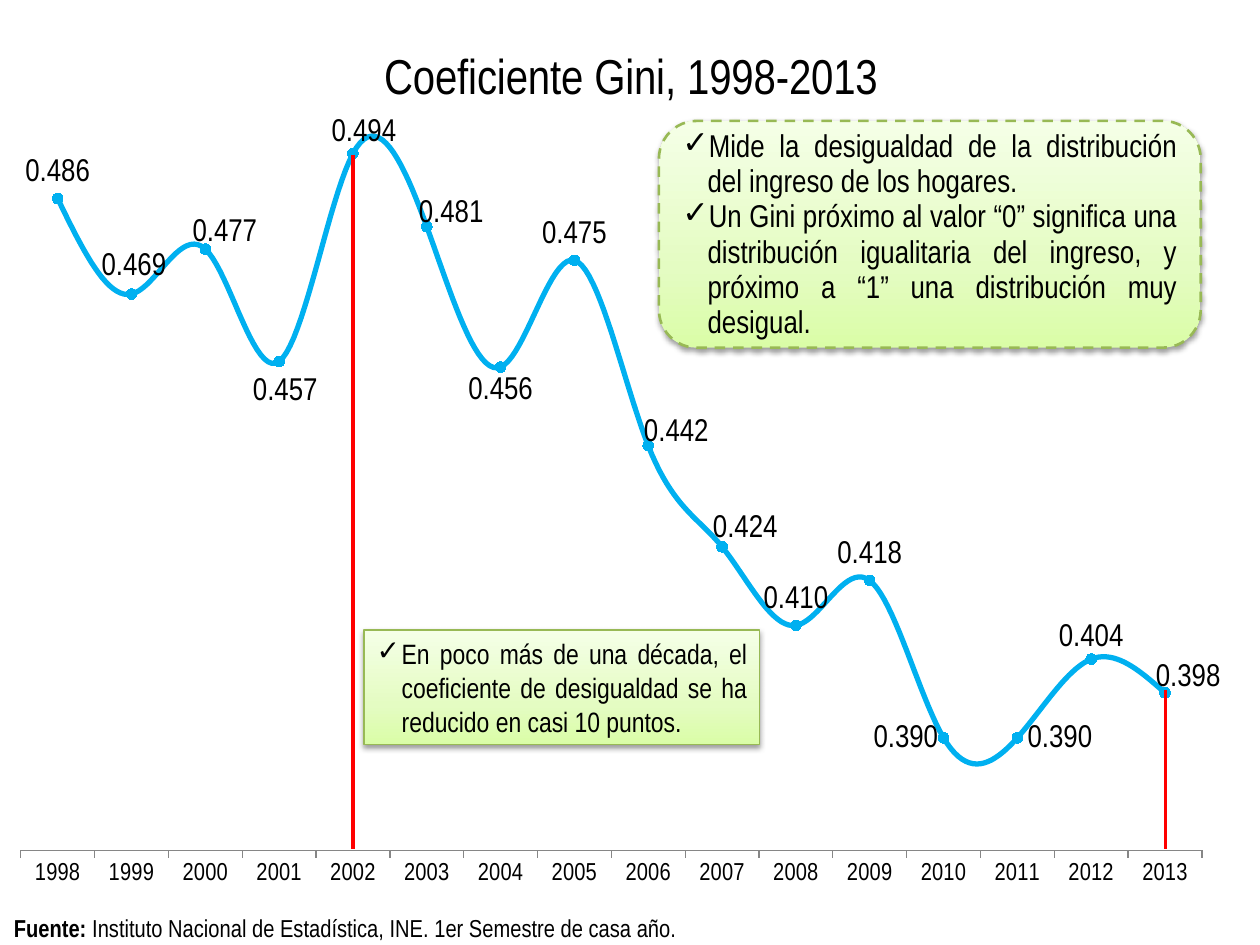
from lxml import etree
from pptx import Presentation
from pptx.chart.data import CategoryChartData
from pptx.dml.color import RGBColor
from pptx.enum.chart import XL_CHART_TYPE, XL_LABEL_POSITION, XL_MARKER_STYLE, XL_TICK_MARK
from pptx.enum.dml import MSO_LINE
from pptx.enum.shapes import MSO_CONNECTOR, MSO_SHAPE
from pptx.enum.text import MSO_ANCHOR, PP_ALIGN
from pptx.oxml import parse_xml
from pptx.oxml.ns import nsdecls, qn
from pptx.util import Inches, Pt

BLACK = RGBColor(0, 0, 0)
BLUE = RGBColor(0x00, 0xB0, 0xF0)
RED = RGBColor(0xFF, 0, 0)
GREEN = RGBColor(0x98, 0xB9, 0x55)
GRAY = RGBColor(0x86, 0x86, 0x86)
FONT = "Arial Narrow"
NUMBER = "0.000"

TITLE = "Coeficiente Gini, 1998-2013"
FIRST_YEAR = 1998
GINI = [0.486, 0.469, 0.477, 0.457, 0.494, 0.481, 0.456, 0.475,
        0.442, 0.424, 0.410, 0.418, 0.390, 0.390, 0.404, 0.398]
ABOVE, BELOW = XL_LABEL_POSITION.ABOVE, XL_LABEL_POSITION.BELOW
LEFT, RIGHT = XL_LABEL_POSITION.LEFT, XL_LABEL_POSITION.RIGHT
# year: side of the point, then shift right and down as a share of the chart
LABELS = {
    1999: (ABOVE, 0.002, -0.002), 2000: (ABOVE, 0.016, 0.011),
    2001: (BELOW, 0.005, 0.007), 2002: (ABOVE, 0.009, 0.005),
    2003: (ABOVE, 0.02, 0.015), 2004: (BELOW, 0, 0),
    2006: (ABOVE, 0.023, 0.014), 2007: (ABOVE, 0.019, 0.009),
    2010: (LEFT, 0.004, 0.002), 2011: (RIGHT, 0, 0.002),
    2012: (ABOVE, 0, 0.005), 2013: (ABOVE, 0.019, 0.012),
}
PLOT = {"x": 0, "y": 0.114, "w": 0.968, "h": 0.834}

DEFINITION = [
    "Mide la desigualdad de la distribución del ingreso de los hogares.",
    "Un Gini próximo al valor “0” significa una distribución igualitaria del ingreso, "
    "y próximo a “1” una distribución muy desigual.",
]
FINDING = ["En poco más de una década, el coeficiente de desigualdad se ha "
           "reducido en casi 10 puntos."]
SOURCE = [("Fuente:", True),
          (" Instituto Nacional de Estadística, INE. 1er Semestre de casa año.", False)]
MARKS = [(2.8, 1.23), (9.25, 5.48)]  # x and top of the red lines
AXIS_Y = 6.74

GRADIENT = f"""<a:gradFill {nsdecls('a')} rotWithShape="1"><a:gsLst>
<a:gs pos="0"><a:srgbClr val="DAFDA7"/></a:gs>
<a:gs pos="35000"><a:srgbClr val="E4FCC2"/></a:gs>
<a:gs pos="100000"><a:srgbClr val="F5FFE7"/></a:gs>
</a:gsLst><a:lin ang="16200000" scaled="1"/></a:gradFill>"""
SHADOW = f"""<a:effectLst {nsdecls('a')}>
<a:outerShdw blurRad="40000" dist="20000" dir="5400000" rotWithShape="0">
<a:srgbClr val="000000"><a:alpha val="38000"/></a:srgbClr></a:outerShdw></a:effectLst>"""


def style_font(font, size, bold=False):
    for name, value in {"name": FONT, "size": Pt(size), "bold": bold}.items():
        setattr(font, name, value)
    font.color.rgb = BLACK


def manual_layout(values, inner=False):
    target = '<c:layoutTarget val="inner"/>' if inner else ""
    modes = '<c:xMode val="edge"/><c:yMode val="edge"/>' if inner else ""
    places = "".join(f'<c:{key} val="{value}"/>' for key, value in values.items())
    return parse_xml(f"<c:layout {nsdecls('c')}><c:manualLayout>{target}{modes}{places}"
                     "</c:manualLayout></c:layout>")


def add_gini_chart(page):
    data = CategoryChartData(number_format=NUMBER)
    data.categories = [str(FIRST_YEAR + i) for i in range(len(GINI))]
    data.add_series("Series 1", GINI)
    chart = page.shapes.add_chart(XL_CHART_TYPE.LINE_MARKERS, Inches(0.16), Inches(0.16),
                                  Inches(9.69), Inches(6.95), data).chart
    chart.has_legend = False
    chart.font.name, chart.font.size = "Calibri", Pt(10)
    chart.has_title = True
    chart.chart_title.text_frame.text = TITLE
    style_font(chart.chart_title.text_frame.paragraphs[0].runs[0].font, 28)

    values, years = chart.value_axis, chart.category_axis
    values.minimum_scale, values.maximum_scale = 0.37, 0.5
    values.has_major_gridlines = values.visible = False
    years.major_tick_mark = XL_TICK_MARK.OUTSIDE
    years.format.line.color.rgb = GRAY
    style_font(years.tick_labels.font, 14)

    plot = chart.plots[0]
    plot.vary_by_categories = False
    area = chart._chartSpace.find(".//" + qn("c:plotArea"))
    for old in area.findall(qn("c:layout")):
        area.remove(old)
    area.insert(0, manual_layout(PLOT, inner=True))

    series = plot.series[0]
    series.smooth = True
    series.format.line.color.rgb, series.format.line.width = BLUE, Pt(3)
    series.marker.style, series.marker.size = XL_MARKER_STYLE.CIRCLE, 6
    series.marker.format.fill.solid()
    series.marker.format.fill.fore_color.rgb = BLUE
    series.marker.format.line.color.rgb = BLUE

    labels = series.data_labels
    labels.show_value, labels.position = True, ABOVE
    labels.number_format, labels.number_format_is_linked = NUMBER, False
    style_font(labels.font, 18)
    for year, (side, _, _) in LABELS.items():
        label = series.points[year - FIRST_YEAR].data_label
        style_font(label.font, 18)
        label.position = side
    for element in series._element.iter(qn("c:dLbl")):
        index = element.find(qn("c:idx"))
        _, right, down = LABELS[FIRST_YEAR + int(index.get("val"))]
        number = etree.Element(qn("c:numFmt"), formatCode=NUMBER, sourceLinked="0")
        index.addnext(number)
        if right or down:
            index.addnext(manual_layout({"x": right, "y": down}))


def add_box(page, kind, left, top, width, height):
    box = page.shapes.add_shape(kind, Inches(left), Inches(top), Inches(width), Inches(height))
    box.shadow.inherit = False
    box.text_frame.word_wrap = True
    box.text_frame.vertical_anchor = MSO_ANCHOR.MIDDLE
    return box


def add_note(page, kind, place, texts, size, line_width, spacing=None):
    """Green gradient box with justified, check-marked paragraphs."""
    box = add_box(page, kind, *place)
    box.line.color.rgb, box.line.width = GREEN, Pt(line_width)
    properties = box._element.spPr
    properties.find(qn("a:prstGeom")).addnext(parse_xml(GRADIENT))
    properties.replace(properties.find(qn("a:effectLst")), parse_xml(SHADOW))
    frame = box.text_frame
    for i, text in enumerate(texts):
        para = frame.add_paragraph() if i else frame.paragraphs[0]
        para.alignment, para.line_spacing = PP_ALIGN.JUSTIFY, spacing
        settings = para._p.get_or_add_pPr()
        settings.set("marL", str(Inches(0.2)))
        settings.set("indent", str(-Inches(0.2)))
        etree.SubElement(settings, qn("a:buFont"), typeface=FONT)
        etree.SubElement(settings, qn("a:buChar"), char="✓")
        span = para.add_run()
        span.text = text
        style_font(span.font, size)
    return box


def add_source(page):
    box = add_box(page, MSO_SHAPE.ROUNDED_RECTANGLE, 0, 7.24, 5.71, 0.24)
    box.fill.background()
    box.line.fill.background()
    para = box.text_frame.paragraphs[0]
    para.alignment = PP_ALIGN.LEFT
    for text, bold in SOURCE:
        span = para.add_run()
        span.text = text
        style_font(span.font, 14, bold)


def add_mark(page, x, top):
    line = page.shapes.add_connector(MSO_CONNECTOR.STRAIGHT, Inches(x), Inches(top),
                                     Inches(x), Inches(AXIS_Y))
    line.line.color.rgb, line.line.width = RED, Pt(2)
    etree.SubElement(line._element.spPr, qn("a:effectLst"))


def main():
    deck = Presentation()
    deck.slide_width, deck.slide_height = Inches(10), Inches(7.5)
    page = deck.slides.add_slide(deck.slide_layouts[6])
    add_gini_chart(page)
    definition = add_note(page, MSO_SHAPE.ROUNDED_RECTANGLE, (5.23, 0.96, 4.3, 1.8),
                          DEFINITION, 18, 1.5, Pt(20))
    definition.line.dash_style = MSO_LINE.DASH
    add_source(page)
    add_note(page, MSO_SHAPE.RECTANGLE, (2.89, 5, 3.14, 0.91), FINDING, 16, 0.75)
    for x, top in MARKS:
        add_mark(page, x, top)
    deck.save("out.pptx")


if __name__ == "__main__":
    main()
